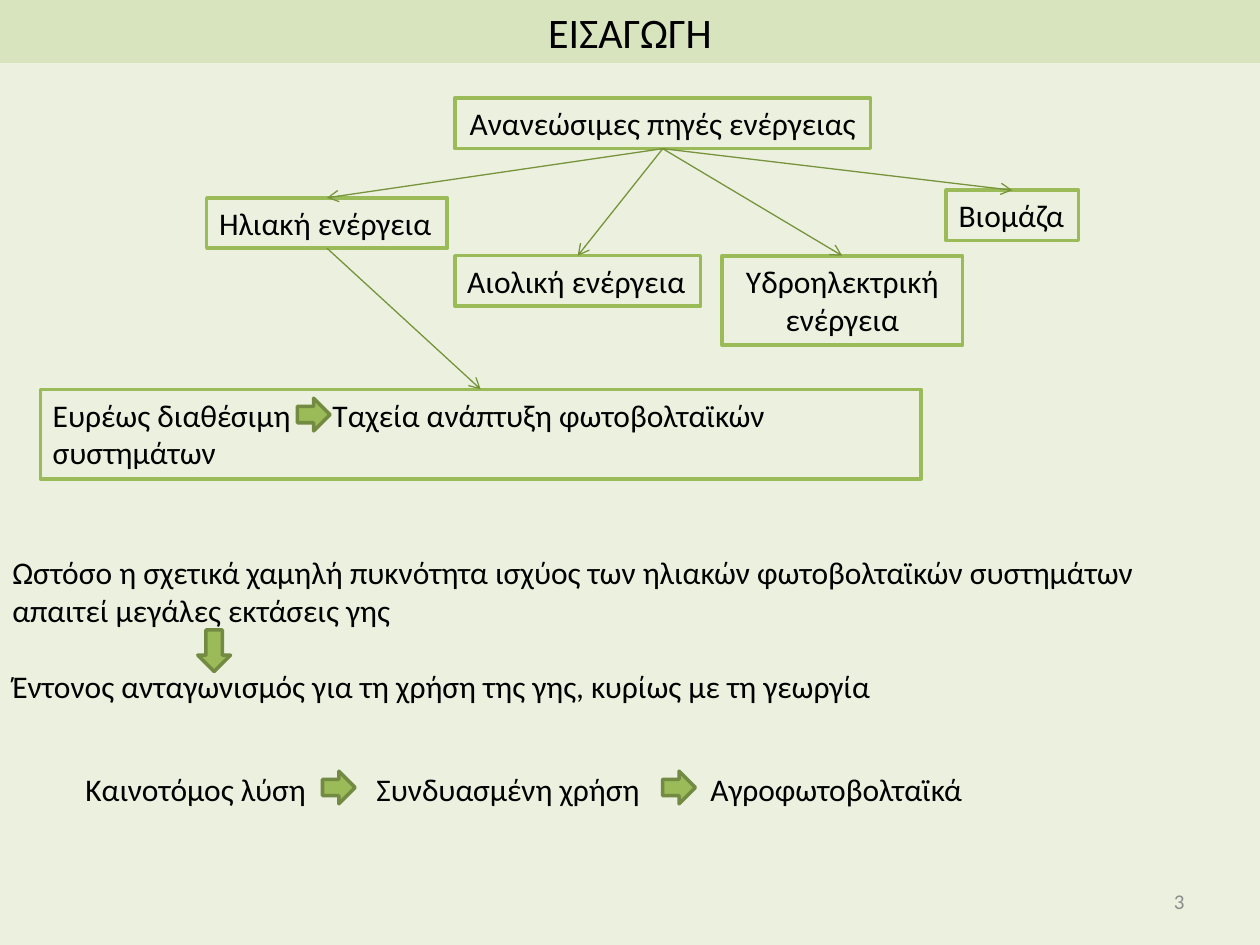
from lxml import etree
from pptx import Presentation
from pptx import util as u
from pptx.dml.color import RGBColor
from pptx.enum import shapes, text
from pptx.oxml import ns

PALE, BAND, GREEN, EDGE, LINK = "EBF1DE", "D7E4BD", "9BBB59", "738A42", "77933C"
BLACK, GREY = "000000", "8C8C8C"
LEFT, MID, RIGHT = text.PP_ALIGN.LEFT, text.PP_ALIGN.CENTER, text.PP_ALIGN.RIGHT
TOP, CORE = text.MSO_ANCHOR.TOP, text.MSO_ANCHOR.MIDDLE

TITLE = "ΕΙΣΑΓΩΓΗ"
BOXES = {
    "root": ("Ανανεώσιμες πηγές ενέργειας", (3.61, 0.78, 3.3, 0.4), MID, True, []),
    "sun": ("Ηλιακή ενέργεια", (1.64, 1.57, 1.91, 0.4), LEFT, False, []),
    "wind": ("Αιολική ενέργεια", (3.61, 2.03, 1.95, 0.4), LEFT, False, []),
    "hydro": ("Υδροηλεκτρική ενέργεια", (5.73, 2.03, 1.91, 0.71), MID, True, []),
    "bio": ("Βιομάζα", (7.51, 1.51, 1.05, 0.4), LEFT, False, []),
    "growth": ("Ευρέως διαθέσιμη\tΤαχεία ανάπτυξη φωτοβολταϊκών συστημάτων",
               (0.32, 3.09, 6.99, 0.71), LEFT, True, [2.22]),
}
LINKS = [("root", "hydro"), ("root", "sun"), ("root", "wind"),
         ("root", "bio"), ("sun", "growth")]
LAND = ["Ωστόσο η σχετικά χαμηλή πυκνότητα ισχύος των ηλιακών φωτοβολταϊκών συστημάτων",
        "απαιτεί μεγάλες εκτάσεις γης",
        "Έντονος ανταγωνισμός για τη χρήση της γης, κυρίως με τη γεωργία"]
STEPS = "Καινοτόμος λύση\tΣυνδυασμένη χρήση\tΑγροφωτοβολταϊκά"
ARROWS = [(1.57, 5, 0.33, 0), (2.36, 3.16, 0.26, 270),
          (2.56, 6.12, 0.26, 270), (5.26, 6.12, 0.26, 270)]


def rgb(code):
    return RGBColor.from_string(code)


def place(vals):
    return [u.Inches(v) for v in vals]


def apply(item, vals):
    for name, val in vals.items():
        setattr(item, name, val)


def paint(shape, fill, edge=None):
    shape.fill.solid()
    shape.fill.fore_color.rgb = rgb(fill)
    if edge:
        shape.line.color.rgb = rgb(edge)
        shape.line.width = u.Pt(2)


def write(shape, lines, size=18, color=BLACK, align=LEFT, anchor=TOP, wrap=True, tabs=()):
    frame = shape.text_frame
    apply(frame, {"text": "\n".join(lines), "word_wrap": wrap, "vertical_anchor": anchor,
                  "auto_size": text.MSO_AUTO_SIZE.NONE})
    for para in frame.paragraphs:
        para.alignment = align
        for run in para.runs:
            apply(run.font, {"name": "Calibri", "size": u.Pt(size)})
            run.font.color.rgb = rgb(color)
        if tabs:
            stops = etree.SubElement(para._p.get_or_add_pPr(), ns.qn("a:tabLst"))
            for stop in tabs:
                etree.SubElement(stops, ns.qn("a:tab"), pos=str(u.Inches(stop)), algn="l")
    return frame


def label(slide, spot, lines, **style):
    return write(slide.shapes.add_textbox(*place(spot)), lines, **style)


def link(slide, start, end):
    line = slide.shapes.add_connector(shapes.MSO_CONNECTOR.STRAIGHT, 0, 0, 0, 0)
    line.begin_connect(start, 2)
    line.end_connect(end, 0)
    line.line.color.rgb = rgb(LINK)
    line.line.width = u.Pt(0.75)
    props = line._element.spPr
    etree.SubElement(props.find(ns.qn("a:ln")), ns.qn("a:tailEnd"), type="arrow")
    etree.SubElement(props, ns.qn("a:effectLst"))


def main():
    deck = Presentation()
    deck.slide_width, deck.slide_height = place((10, 7.5))
    slide = deck.slides.add_slide(deck.slide_layouts[5])
    slide.background.fill.solid()
    slide.background.fill.fore_color.rgb = rgb(PALE)

    title = slide.shapes.title
    apply(title, dict(zip(("left", "top", "width", "height"), place((0, 0, 10, 0.5)))))
    paint(title, BAND)
    write(title, [TITLE], size=24, align=MID, anchor=CORE)

    made = {}
    for key, (words, spot, align, wrap, tabs) in BOXES.items():
        box = slide.shapes.add_shape(shapes.MSO_SHAPE.RECTANGLE, *place(spot))
        box.shadow.inherit = False
        paint(box, PALE, GREEN)
        write(box, [words], align=align, wrap=wrap, tabs=tabs)
        made[key] = box
    for start, end in LINKS:
        link(slide, made[start], made[end])

    land = label(slide, (0, 4.34, 9.7, 1.31), LAND)
    land.paragraphs[-1].space_before = u.Pt(22)
    label(slide, (0.58, 6.06, 8.77, 0.4), [STEPS], tabs=[2.31, 4.96])
    label(slide, (7.17, 6.95, 2.33, 0.4), ["3"], size=12, color=GREY,
          align=RIGHT, anchor=CORE)

    for left, top, tall, turn in ARROWS:
        arrow = slide.shapes.add_shape(shapes.MSO_SHAPE.DOWN_ARROW,
                                       *place((left, top, 0.26, tall)))
        arrow.shadow.inherit = False
        arrow.rotation = turn
        paint(arrow, GREEN, EDGE)

    deck.save("out.pptx")


if __name__ == "__main__":
    main()
